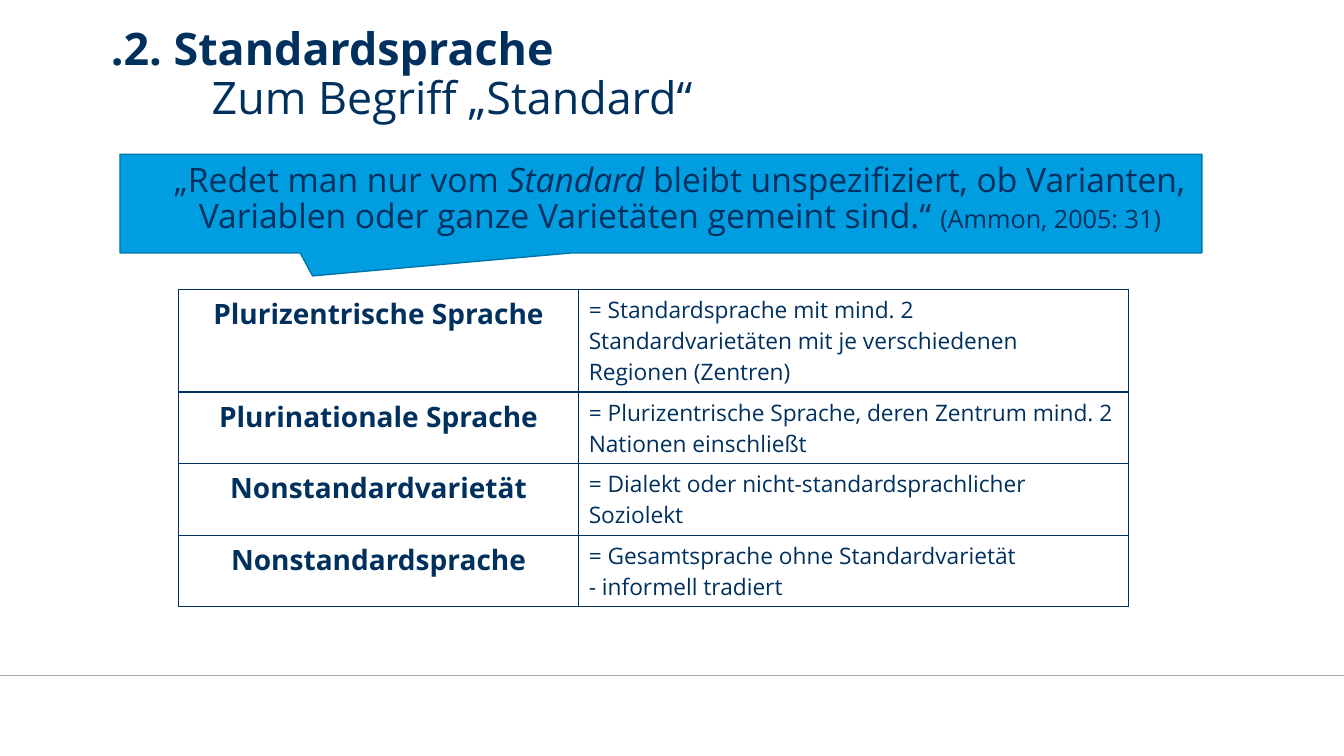
from lxml.etree import SubElement
from pptx import Presentation
from pptx.dml.color import RGBColor
from pptx.enum.shapes import MSO_CONNECTOR, MSO_SHAPE
from pptx.enum.text import MSO_ANCHOR, PP_ALIGN
from pptx.oxml.ns import qn
from pptx.util import Inches, Pt

NAVY = "00305E"
TERMS = [
    ("Plurizentrische Sprache",
     "= Standardsprache mit mind. 2 Standardvarietäten mit je verschiedenen Regionen (Zentren)"),
    ("Plurinationale Sprache",
     "= Plurizentrische Sprache, deren Zentrum mind. 2 Nationen einschließt"),
    ("Nonstandardvarietät", "= Dialekt oder nicht-standardsprachlicher Soziolekt"),
    ("Nonstandardsprache", "= Gesamtsprache ohne Standardvarietät\n- informell tradiert"),
]
ROW_HEIGHTS = [1.02, 0.71, 0.71, 0.71]


def rgb(color):
    return RGBColor.from_string(color)


def set_font(font, size, bold=None):
    font.name = "Open Sans"
    font.size = Pt(size)
    font.color.rgb = rgb(NAVY)
    font.bold = bold


def prepare_frame(tf):
    """Wrap from the top edge, without insets."""
    tf.word_wrap = True
    tf.vertical_anchor = MSO_ANCHOR.TOP
    tf.margin_left = tf.margin_right = tf.margin_top = tf.margin_bottom = 0


def add_rule(s):
    line = s.shapes.add_connector(MSO_CONNECTOR.STRAIGHT, 0, Inches(6.7), Inches(13.33), Inches(6.7))
    line.line.color.rgb = rgb("A6A6A6")
    line.line.width = Pt(1)
    SubElement(line._element.spPr, qn("a:effectLst"))


def add_callout(s):
    callout = s.shapes.add_shape(MSO_SHAPE.RECTANGULAR_CALLOUT, Inches(1.19), Inches(1.53),
                                 Inches(10.73), Inches(0.98))
    callout.adjustments[0] = -0.322
    callout.adjustments[1] = 0.732
    callout.shadow.inherit = False
    callout.fill.solid()
    callout.fill.fore_color.rgb = rgb("009EE0")
    callout.line.color.rgb = rgb("0075A6")
    callout.line.width = Pt(1)


def fill_title(s):
    title = s.shapes.title
    title.left, title.top = Inches(1.1), Inches(0.27)
    title.width, title.height = Inches(11.57), Inches(0.75)
    tf = title.text_frame
    prepare_frame(tf)
    p = tf.paragraphs[0]
    tabs = SubElement(p._p.get_or_add_pPr(), qn("a:tabLst"))
    SubElement(tabs, qn("a:tab"), pos=str(Inches(1)), algn="l")
    p.alignment = PP_ALIGN.LEFT
    p.line_spacing = 0.9
    r = p.add_run()
    r.text = ".2. Standardsprache"
    set_font(r.font, 32, True)
    p.add_line_break()
    set_font(p.font, 32)
    r = p.add_run()
    r.text = "\tZum Begriff „Standard“"
    set_font(r.font, 32, False)


def add_quote(s):
    box = s.shapes.add_textbox(Inches(0.96), Inches(1.62), Inches(11.57), Inches(0.75))
    prepare_frame(box.text_frame)
    p = box.text_frame.paragraphs[0]
    p.alignment = PP_ALIGN.CENTER
    p.line_spacing = 0.9
    for text, size, italic in [
        ("„Redet man nur vom ", 24, False),
        ("Standard", 24, True),
        (" bleibt unspezifiziert, ob Varianten, Variablen oder ganze Varietäten gemeint sind.“ ", 24, False),
        ("(Ammon, 2005: 31)", 18, False),
    ]:
        r = p.add_run()
        r.text = text
        set_font(r.font, size)
        r.font.italic = italic


def add_borders(cell):
    tcPr = cell._tc.get_or_add_tcPr()
    for side in ("lnL", "lnR", "lnT", "lnB"):
        ln = SubElement(tcPr, qn(f"a:{side}"), w=str(Pt(1)))
        SubElement(SubElement(ln, qn("a:solidFill")), qn("a:srgbClr"), val=NAVY)


def fill_cell(cell, text, size, bold, alignment):
    add_borders(cell)
    cell.fill.background()
    cell.text = text
    for p in cell.text_frame.paragraphs:
        p.alignment = alignment
        set_font(p.font, size, bold)


def add_terms_table(s):
    table = s.shapes.add_table(len(TERMS), 2, Inches(1.77), Inches(2.87), Inches(9.42),
                               Inches(sum(ROW_HEIGHTS))).table
    table.first_row = table.horz_banding = False
    table.columns[0].width, table.columns[1].width = Inches(3.97), Inches(5.45)
    for row, height, (term, meaning) in zip(table.rows, ROW_HEIGHTS, TERMS):
        row.height = Inches(height)
        fill_cell(row.cells[0], term, 20, True, PP_ALIGN.CENTER)
        fill_cell(row.cells[1], meaning, 16.2, False, PP_ALIGN.LEFT)


def main():
    prs = Presentation()
    prs.slide_width, prs.slide_height = Inches(13.33), Inches(7.5)
    s = prs.slides.add_slide(prs.slide_layouts[5])
    add_rule(s)
    add_callout(s)
    fill_title(s)
    add_quote(s)
    add_terms_table(s)
    prs.save("out.pptx")


if __name__ == "__main__":
    main()
